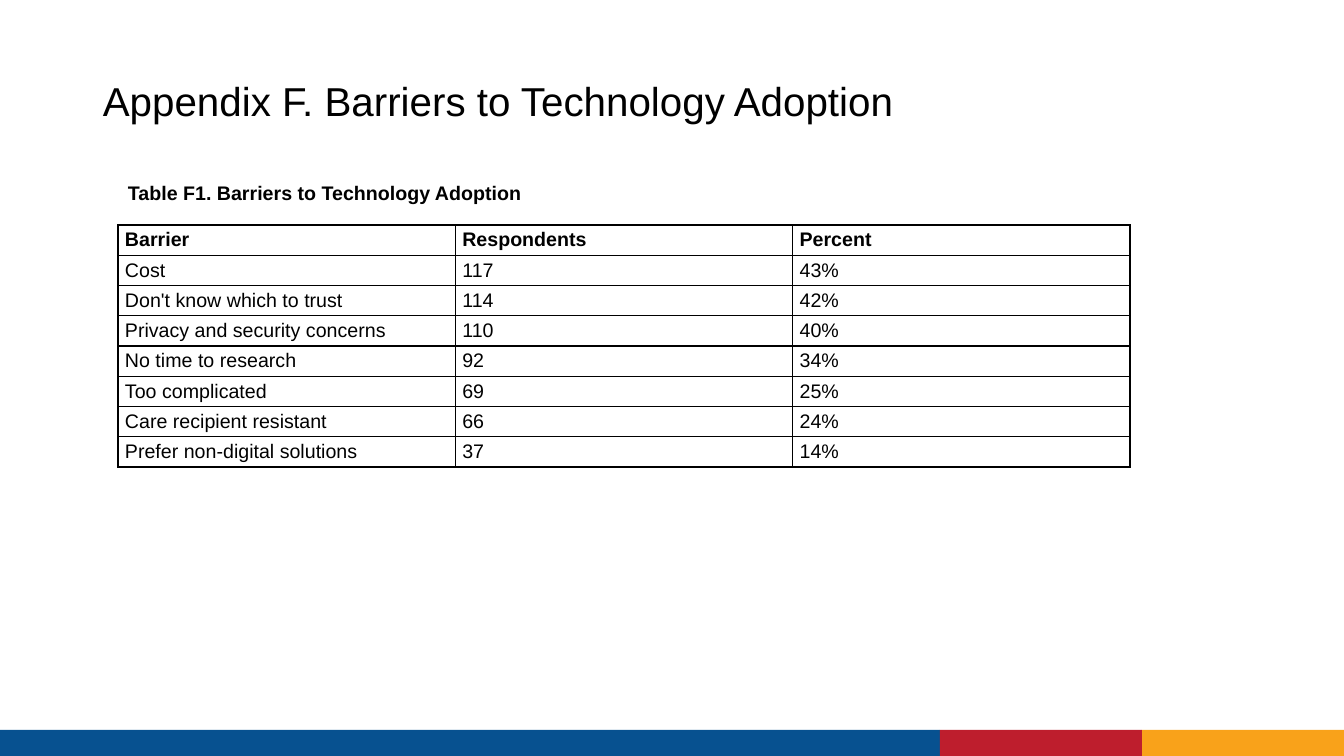
from lxml.etree import SubElement as Sub
from pptx import Presentation
from pptx.dml.color import RGBColor
from pptx.enum.shapes import MSO_SHAPE as Shape
from pptx.enum.text import MSO_ANCHOR as Anchor
from pptx.oxml.ns import qn
from pptx.util import Pt

SCALE = 914400 / 100.8
WIDE, HIGH = 1344, 756
BLACK = RGBColor(0x00, 0x00, 0x00)
BLUE = RGBColor(0x07, 0x51, 0x90)
RED = RGBColor(0xBE, 0x1E, 0x2D)
GOLD = RGBColor(0xF9, 0xA2, 0x1A)

ROWS = [
    ("Barrier", "Respondents", "Percent"),
    ("Cost", "117", "43%"),
    ("Don't know which to trust", "114", "42%"),
    ("Privacy and security concerns", "110", "40%"),
    ("No time to research", "92", "34%"),
    ("Too complicated", "69", "25%"),
    ("Care recipient resistant", "66", "24%"),
    ("Prefer non-digital solutions", "37", "14%"),
]


def px(count):
    return round(count * SCALE)


def style(para, size, bold=False):
    font = para.font
    font.name = "Arial"
    font.size = Pt(size)
    font.bold = bold
    font.color.rgb = BLACK


def add_label(slide, box, text, size, bold=False, anchor=Anchor.TOP):
    frame = slide.shapes.add_textbox(*map(px, box)).text_frame
    frame.word_wrap = True
    frame.vertical_anchor = anchor
    para = frame.paragraphs[0]
    para.text = text
    style(para, size, bold)
    return para


def add_title(slide, box):
    para = add_label(slide, box, "Appendix F. Barriers to Technology Adoption",
                     28.8, anchor=Anchor.BOTTOM)
    para.line_spacing = 0.9


def add_footer(slide, box):
    left, top, width, height = box
    part = 202
    bands = [
        (left, width - 2 * part, BLUE),
        (left + width - part, part, GOLD),
        (left + width - 2 * part, part, RED),
    ]
    for start, span, color in bands:
        band = slide.shapes.add_shape(
            Shape.RECTANGLE, px(start), px(top), px(span), px(height))
        band.shadow.inherit = False
        band.fill.solid()
        band.fill.fore_color.rgb = color
        band.line.fill.background()


def add_edges(cell):
    props = cell._tc.get_or_add_tcPr()
    for side in ("lnL", "lnR", "lnT", "lnB"):
        edge = Sub(props, qn(f"a:{side}"), w=str(Pt(1)))
        fill = Sub(edge, qn("a:solidFill"))
        Sub(fill, qn("a:srgbClr"), val=str(BLACK))


def add_grid(slide, box):
    frame = slide.shapes.add_table(len(ROWS), len(ROWS[0]), *map(px, box))
    table = frame.table
    table.first_row = False
    table.horz_banding = False
    for i, row in enumerate(ROWS):
        for j, text in enumerate(row):
            cell = table.cell(i, j)
            add_edges(cell)
            cell.fill.background()
            cell.vertical_anchor = Anchor.MIDDLE
            cell.margin_left = cell.margin_right = px(7)
            cell.margin_top = cell.margin_bottom = px(3)
            cell.text = text
            style(cell.text_frame.paragraphs[0], 14, i == 0)


def main():
    deck = Presentation()
    deck.slide_width = px(WIDE)
    deck.slide_height = px(HIGH)
    slide = deck.slides.add_slide(deck.slide_layouts[6])
    add_footer(slide, (0, 730, WIDE, 27))
    add_title(slide, (93, 69, 893, 61))
    add_label(slide, (118, 176, 672, 34),
              "Table F1. Barriers to Technology Adoption", 14, True)
    add_grid(slide, (118, 225, 1012, 242))
    deck.save("out.pptx")


if __name__ == "__main__":
    main()
